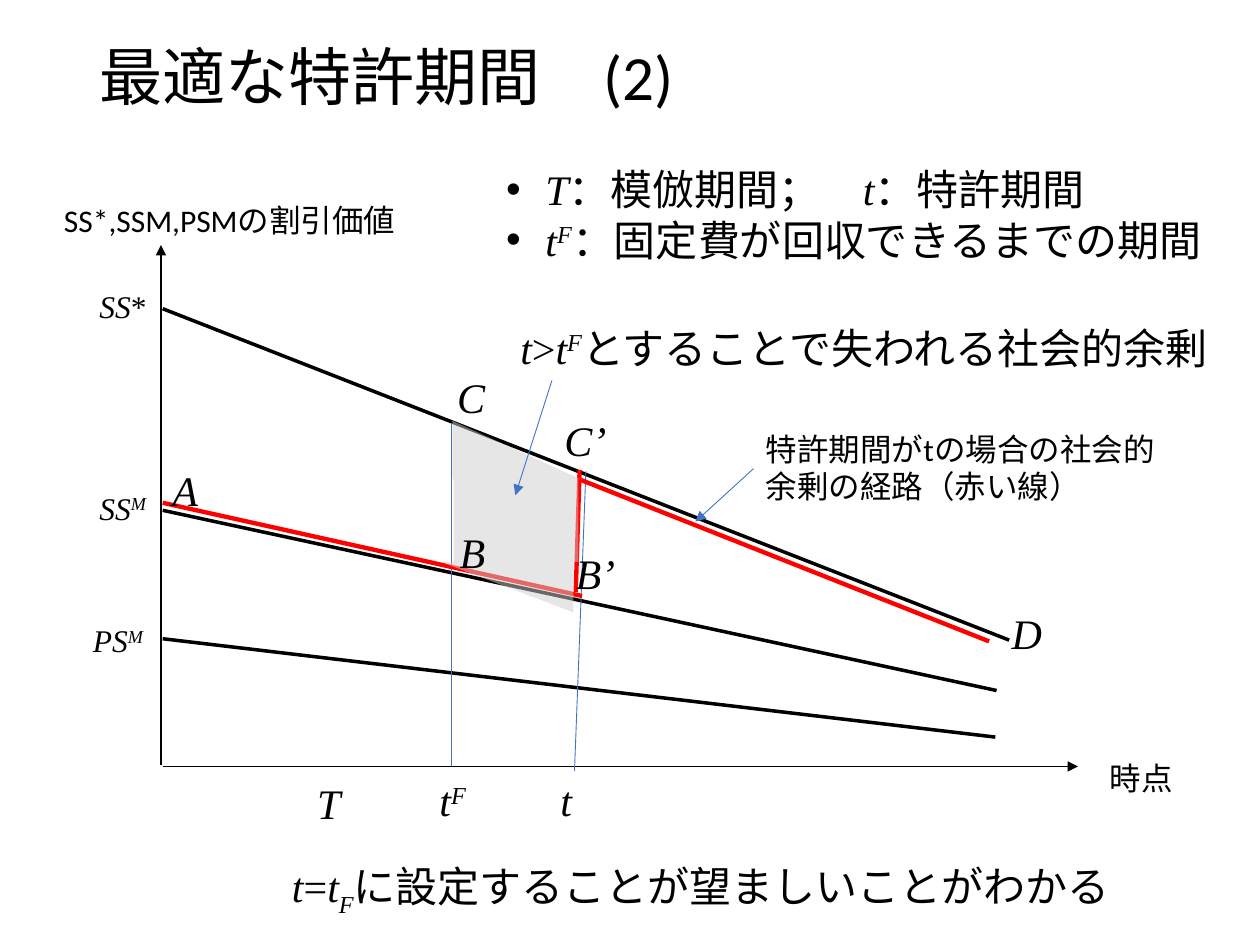
"""Build the slide on the optimal patent period with its discounted surplus diagram."""
from lxml import etree
from pptx import Presentation
from pptx.dml.color import RGBColor
from pptx.enum.shapes import MSO_CONNECTOR, MSO_SHAPE
from pptx.enum.text import MSO_ANCHOR, MSO_AUTO_SIZE, PP_ALIGN
from pptx.oxml.ns import qn
from pptx.util import Pt

STRAIGHT = MSO_CONNECTOR.STRAIGHT
RECT, TRIANGLE = MSO_SHAPE.RECTANGLE, MSO_SHAPE.RIGHT_TRIANGLE
COLORS = {"black": "000000", "blue": "4472C4", "red": "FF0000", "shade": "D0CECE"}
BASELINES = {"sup": "30000", "sub": "-25000"}


def write(p, size, runs):
    """Fill a paragraph with (text, style) runs; style is plain, roman, italic, sup or sub."""
    p.font.size = Pt(size)
    p.font.color.rgb = RGBColor.from_string(COLORS["black"])
    for text, style in runs:
        r = p.add_run()
        r.text = text
        r.font.name = "Calibri" if style == "plain" else "Times New Roman"
        r.font.italic = style in ("italic", "sup", "sub")
        if style in BASELINES:
            r.font._element.set("baseline", BASELINES[style])


def draw_lines(lines):
    """Draw straight lines given as (color, width, arrow, x1, y1, x2, y2)."""
    for color, width, arrow, *ends in lines:
        line = s.shapes.add_connector(STRAIGHT, *(Pt(v) for v in ends))
        line.line.color.rgb = RGBColor.from_string(COLORS[color])
        line.line.width = Pt(width)
        if arrow:
            etree.SubElement(line.line._get_or_add_ln(), qn("a:tailEnd"), type="triangle")
        etree.SubElement(line._element.spPr, qn("a:effectLst"))


prs = Presentation()
prs.slide_width, prs.slide_height = Pt(720), Pt(540)
s = prs.slides.add_slide(prs.slide_layouts[1])

title, body = s.placeholders
title.left, title.top, title.width, title.height = Pt(49.5), Pt(6), Pt(611), Pt(79)
tf = title.text_frame
tf.vertical_anchor = MSO_ANCHOR.MIDDLE
p = tf.paragraphs[0]
p.alignment = PP_ALIGN.LEFT
p.line_spacing = 0.9
write(p, 36, [("最適な特許期間\u3000(2)".replace("\u3000", "　"), "plain")])

body.left, body.top, body.width, body.height = Pt(282), Pt(90), Pt(423), Pt(87)
tf = body.text_frame
tf.auto_size = MSO_AUTO_SIZE.NONE
definitions = [
    [("T", "italic"), ("：", "roman"), ("模倣期間；　", "plain"), ("t", "italic"), ("：特許期間", "plain")],
    [("t", "italic"), ("F", "sup"), ("：固定費が回収できるまでの期間", "plain")],
]
for i, runs in enumerate(definitions):
    p = tf.add_paragraph() if i else tf.paragraphs[0]
    p.space_before = Pt(0)
    pPr = p._p.get_or_add_pPr()
    pPr.set("marL", str(Pt(22.5)))
    pPr.set("indent", str(Pt(-22.5)))
    write(p, 24, runs)

draw_lines([
    ("black", 1, True, 93, 438, 616, 438),
    ("black", 1, True, 92, 437, 92, 140),
    ("black", 2, False, 93, 176.4, 576.7, 365.8),
    ("black", 2, False, 93, 291.6, 569.5, 394.6),
    ("black", 2, False, 93, 365, 568.8, 421.2),
    ("blue", 0.5, False, 328.3, 440.6, 334.8, 269.3),
    ("blue", 0.5, False, 257.8, 437.8, 257.8, 241.9),
    ("red", 2.5, False, 93, 287.3, 332.6, 340.6),
    ("red", 2.5, False, 329, 338.4, 331.2, 268.6),
    ("red", 2.5, False, 332, 274.3, 565.2, 366.5),
])

shades = [
    (RECT, 0, 259.2, 273.6, 71.3, 47.5),
    (TRIANGLE, 0, 258.5, 240.5, 72.7, 33.1),
    (TRIANGLE, 180, 252, 321.1, 75.6, 28.8),
]
for kind, rotation, *box in shades:
    sp = s.shapes.add_shape(kind, *(Pt(v) for v in box))
    sp.rotation = rotation
    sp.shadow.inherit = False
    sp.line.fill.background()
    sp.fill.solid()
    sp.fill.fore_color.rgb = RGBColor.from_string(COLORS["shade"])
    srgb = sp._element.spPr.find(qn("a:solidFill")).find(qn("a:srgbClr"))
    etree.SubElement(srgb, qn("a:alpha"), val="50000")

labels = [
    (627, 430, 65.5, 18, [("時点", "plain")]),
    (29.5, 111.6, 211, 18, [("SS*,SSM,PSMの割引価値", "plain")]),
    (49.7, 160.6, 42.5, 18, [("SS", "italic"), ("*", "roman")]),
    (49.7, 275.8, 45.4, 18, [("SS", "italic"), ("M", "sup")]),
    (46, 351.4, 49, 18, [("PS", "italic"), ("M", "sup")]),
    (244, 439.2, 41.8, 24, [("t", "italic"), ("F", "sup")]),
    (174.2, 440.6, 45.4, 24, [("T", "italic")]),
    (313.2, 439.2, 45.4, 24, [("t", "italic")]),
    (91.4, 262, 29.5, 24, [("A", "italic")]),
    (571, 343.4, 32.4, 24, [("D", "italic")]),
    (254.2, 208.8, 31, 24, [("C", "italic")]),
    (255.6, 297.4, 29.5, 24, [("B", "italic")]),
    (321.8, 309.6, 37.4, 24, [("B’", "italic")]),
    (315.4, 233.3, 38.9, 24, [("C’", "italic")]),
    (430.6, 242, 252.7, 18, [("特許期間がtの場合の社会的余剰の経路（赤い線）", "plain")]),
    (290.2, 180.7, 411, 24, [("t", "italic"), (">", "roman"), ("t", "italic"), ("F", "sup"),
                             ("とすることで失われる社会的余剰", "plain")]),
    (159.8, 488.2, 522.7, 24, [("t", "italic"), ("=", "roman"), ("t", "italic"), ("F", "sub"),
                               ("に設定することが望ましいことがわかる", "plain")]),
]
for left, top, width, size, runs in labels:
    tb = s.shapes.add_textbox(Pt(left), Pt(top), Pt(width), Pt(size * 1.2 + 7.2))
    tb.text_frame.word_wrap = True
    write(tb.text_frame.paragraphs[0], size, runs)

draw_lines([
    ("blue", 0.5, True, 430.6, 267.8, 397.4, 302.4 - 4.3),
    ("blue", 0.5, True, 315.4, 217.4, 294.5, 283),
])

prs.save("out.pptx")
